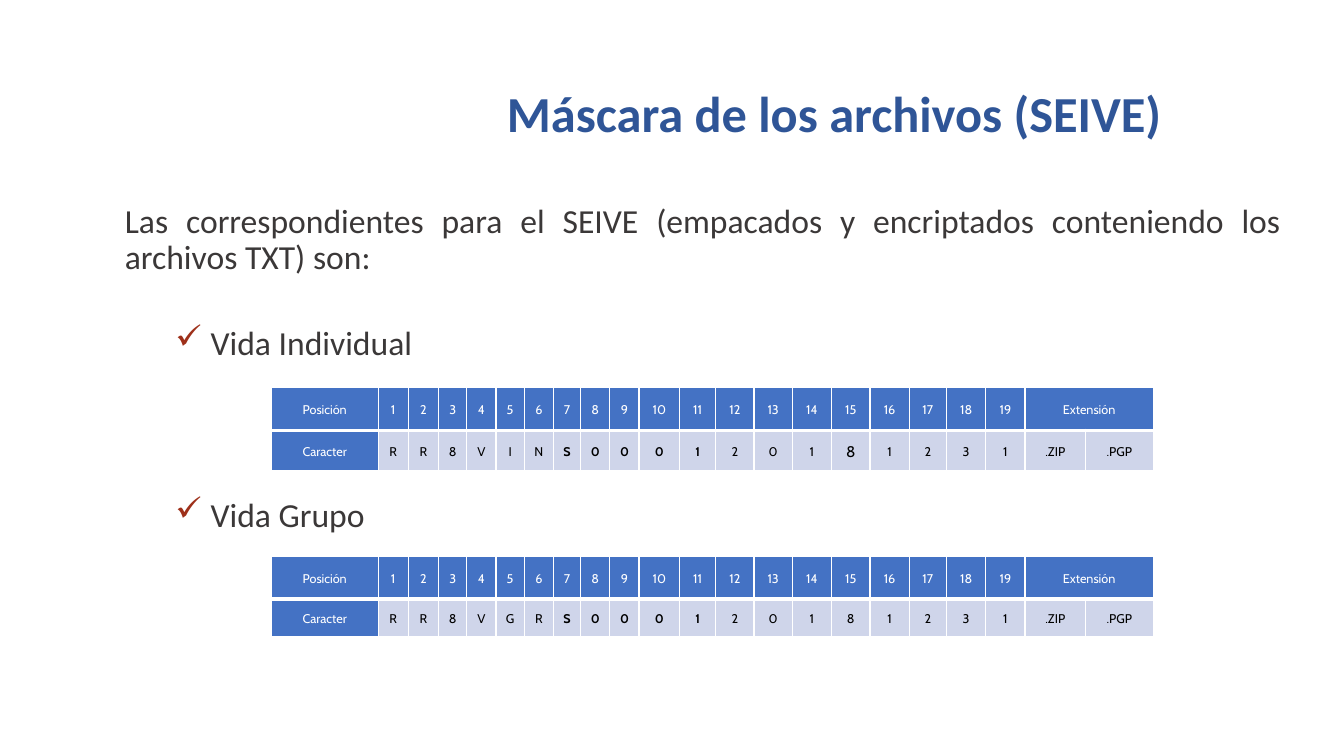
"""Build the slide on the file name masks of SEIVE."""
from dataclasses import dataclass

from lxml import etree
from pptx import Presentation
from pptx import util as u
from pptx.dml.color import RGBColor
from pptx.enum import text
from pptx.oxml import ns

WHITE, BLACK, HEADER_BLUE, PALE_BLUE = "FFFFFF", "000000", "4472C4", "CFD5EA"
TITLE_BLUE, BODY_GREY, CHECK_RED = "2F5597", "3B3838", "9E301A"
COLUMN_WIDTHS = [1.06, 0.3, 0.3, 0.28, 0.29, 0.28, 0.29, 0.27, 0.29, 0.29, 0.4,
                 0.36, 0.38, 0.38, 0.39, 0.38, 0.39, 0.37, 0.39, 0.39, 0.6, 0.67]
HEADINGS = ["Posición", *map(str, range(1, 20)), "Extensión", ""]
BOLD_POSITIONS = range(7, 12)
EXTENSIONS = [".ZIP", ".PGP"]


@dataclass
class Mask:
    name: str
    characters: str
    top: float
    row_heights: tuple[float, float]
    space_before: float
    large_position: int = 0


MASKS = [
    Mask("Vida Individual", "RR8VINS000120181231", 3.84, (0.43, 0.4), 35, 15),
    Mask("Vida Grupo", "RR8VGRS000120181231", 5.52, (0.42, 0.38), 97),
]


def rgb(value: str) -> RGBColor:
    return RGBColor.from_string(value)


def format_font(paragraph, name: str, size: float, color: str, bold: bool = False) -> None:
    font = paragraph.font
    font.name, font.size, font.bold = name, u.Pt(size), bold
    font.color.rgb = rgb(color)


def add_check_bullet(paragraph) -> None:
    properties = paragraph._p.get_or_add_pPr()
    properties.set("marL", str(u.Inches(0.85)))
    properties.set("indent", str(u.Inches(-0.35)))
    bullet_color = etree.SubElement(properties, ns.qn("a:buClr"))
    etree.SubElement(bullet_color, ns.qn("a:srgbClr"), val=CHECK_RED)
    etree.SubElement(properties, ns.qn("a:buChar"), char="✓")


def add_borders(cell, bottom_width: float) -> None:
    properties = cell._tc.get_or_add_tcPr()
    for side, width in {"L": 1, "R": 1, "T": 1, "B": bottom_width}.items():
        line = etree.SubElement(properties, ns.qn(f"a:ln{side}"), w=str(u.Pt(width)))
        fill = etree.SubElement(line, ns.qn("a:solidFill"))
        etree.SubElement(fill, ns.qn("a:srgbClr"), val=WHITE)


def format_cell(cell, content: str, fill: str, color: str, size: float,
                bold: bool, bottom_width: float) -> None:
    add_borders(cell, bottom_width)
    cell.fill.solid()
    cell.fill.fore_color.rgb = rgb(fill)
    cell.margin_left = cell.margin_right = u.Inches(0.05)
    cell.margin_top = cell.margin_bottom = 0
    cell.vertical_anchor = text.MSO_ANCHOR.MIDDLE
    cell.text = content
    paragraph = cell.text_frame.paragraphs[0]
    paragraph.alignment = text.PP_ALIGN.CENTER
    paragraph.line_spacing = 1.15
    paragraph.space_after = u.Pt(10)
    format_font(paragraph, "Cabin", size, color, bold)


def add_title(slide) -> None:
    title = slide.shapes.title
    title.left, title.top = u.Inches(4.74), u.Inches(0.73)
    title.width, title.height = u.Inches(7.07), u.Inches(0.76)
    frame = title.text_frame
    frame.text = "Máscara de los archivos (SEIVE)"
    frame.auto_size = text.MSO_AUTO_SIZE.NONE
    frame.vertical_anchor = text.MSO_ANCHOR.MIDDLE
    paragraph = frame.paragraphs[0]
    paragraph.alignment = text.PP_ALIGN.CENTER
    format_font(paragraph, "Calibri", 36, TITLE_BLUE, True)


def add_body(slide) -> None:
    box = slide.shapes.add_textbox(u.Inches(1.14), u.Inches(1.98),
                                   u.Inches(11.66), u.Inches(4.92))
    frame = box.text_frame
    frame.word_wrap = True
    frame.text = ("Las correspondientes para el SEIVE (empacados y encriptados "
                  "conteniendo los archivos TXT) son:")
    for mask in MASKS:
        paragraph = frame.add_paragraph()
        paragraph.text = mask.name
        paragraph.space_before = u.Pt(mask.space_before)
        add_check_bullet(paragraph)
    for paragraph in frame.paragraphs:
        paragraph.alignment = text.PP_ALIGN.JUSTIFY
        paragraph.line_spacing = 0.9
        format_font(paragraph, "Calibri", 24, BODY_GREY)


def add_mask_table(slide, mask: Mask) -> None:
    table = slide.shapes.add_table(
        2, len(COLUMN_WIDTHS), u.Inches(2.69), u.Inches(mask.top),
        u.Inches(sum(COLUMN_WIDTHS)), u.Inches(sum(mask.row_heights))).table
    table.first_row = table.horz_banding = False
    for column, width in zip(table.columns, COLUMN_WIDTHS):
        column.width = u.Inches(width)
    for row, height in zip(table.rows, mask.row_heights):
        row.height = u.Inches(height)
    values = ["Caracter", *mask.characters, *EXTENSIONS]
    for position, (heading, value) in enumerate(zip(HEADINGS, values)):
        format_cell(table.cell(0, position), heading, HEADER_BLUE, WHITE, 9, False, 3)
        is_label = position == 0
        size = 11 if position and position == mask.large_position else 9
        format_cell(table.cell(1, position), value,
                    HEADER_BLUE if is_label else PALE_BLUE,
                    WHITE if is_label else BLACK,
                    size, position in BOLD_POSITIONS, 1)
    table.cell(0, 20).merge(table.cell(0, 21))


def main() -> None:
    presentation = Presentation()
    presentation.slide_width = u.Inches(13.33)
    presentation.slide_height = u.Inches(7.5)
    slide = presentation.slides.add_slide(presentation.slide_layouts[5])
    add_title(slide)
    add_body(slide)
    for mask in MASKS:
        add_mask_table(slide, mask)
    presentation.save("out.pptx")


if __name__ == "__main__":
    main()
